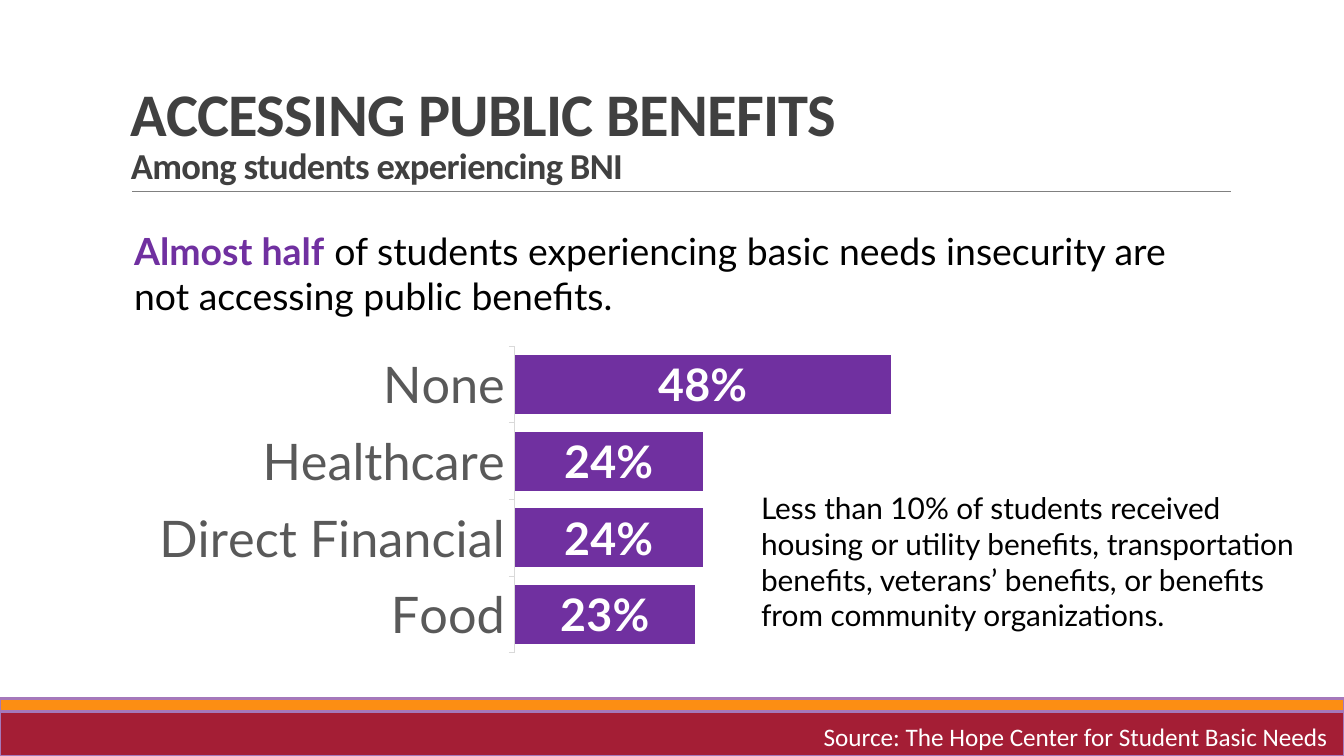
import dataclasses

import pptx
import pptx.chart.data
import pptx.dml.color
import pptx.enum.chart
import pptx.enum.shapes
import pptx.enum.text
import pptx.oxml.ns
import pptx.util
from lxml import etree

Inches = pptx.util.Inches
Pt = pptx.util.Pt


@dataclasses.dataclass(frozen=True)
class Theme:
    heading_font: str = "Calibri"
    body_font: str = "Lato"
    purple: str = "7030A0"
    crimson: str = "A41E35"
    orange: str = "FC8E13"
    band_edge: str = "A578BA"
    heading: str = "404040"
    rule: str = "808080"
    axis_text: str = "595959"
    axis_line: str = "D9D9D9"
    black: str = "000000"
    white: str = "FFFFFF"
    title_size: float = 43.2
    subtitle_size: float = 26.1
    lead_size: float = 26.7
    note_size: float = 21.3
    source_size: float = 18
    category_size: float = 36
    label_size: float = 32


THEME = Theme()


def rgb(color):
    return pptx.dml.color.RGBColor.from_string(color)


def style_font(font, name, size, color, bold=False):
    font.name = name
    font.size = Pt(size)
    font.color.rgb = rgb(color)
    font.bold = bold


def add_text_box(slide, left, top, width, height, wrap=True):
    box = slide.shapes.add_textbox(Inches(left), Inches(top), Inches(width), Inches(height))
    box.text_frame.word_wrap = wrap
    return box.text_frame


def add_span(para, text, name, size, color, bold=False):
    span = para.add_run()
    span.text = text
    style_font(span.font, name, size, color, bold)
    return span


def add_band(slide, left, top, width, height, color):
    band = slide.shapes.add_shape(
        pptx.enum.shapes.MSO_SHAPE.RECTANGLE,
        Inches(left), Inches(top), Inches(width), Inches(height))
    band.shadow.inherit = False
    band.fill.solid()
    band.fill.fore_color.rgb = rgb(color)
    band.line.color.rgb = rgb(THEME.band_edge)
    band.line.width = Pt(2)


def add_footer(slide, left, top, width, height):
    stripe = 0.13
    add_band(slide, left, top + stripe, width, height - stripe, THEME.crimson)
    add_band(slide, left, top, width, stripe, THEME.orange)
    source_width = 5.26
    frame = add_text_box(slide, left + width - source_width, top + 0.18,
                         source_width, 0.4, wrap=False)
    add_span(frame.paragraphs[0], "Source: The Hope Center for Student Basic Needs",
             THEME.heading_font, THEME.source_size, THEME.white)


def add_title(slide, left, top, width, height):
    bottom = top + height
    rule = slide.shapes.add_connector(
        pptx.enum.shapes.MSO_CONNECTOR.STRAIGHT,
        Inches(left + 0.11), Inches(bottom), Inches(left + width + 0.01), Inches(bottom))
    rule.line.color.rgb = rgb(THEME.rule)
    rule.line.width = Pt(0.5)
    etree.SubElement(rule._element.spPr, pptx.oxml.ns.qn("a:effectLst"))

    frame = add_text_box(slide, left, top, width, height)
    frame.vertical_anchor = pptx.enum.text.MSO_ANCHOR.BOTTOM
    para = frame.paragraphs[0]
    para.line_spacing = 0.85
    title = add_span(para, "ACCESSING PUBLIC BENEFITS", THEME.heading_font,
                     THEME.title_size, THEME.heading, True)
    para.add_line_break()
    subtitle = add_span(para, "Among students experiencing BNI", THEME.heading_font,
                        THEME.subtitle_size, THEME.heading, True)
    for span in (title, subtitle):
        span.font._element.set("spc", "-50")


def add_lead(slide, left, top, width, height):
    frame = add_text_box(slide, left, top, width, height)
    frame.margin_left = frame.margin_right = Inches(0.13)
    frame.margin_top = frame.margin_bottom = Inches(0.07)
    para = frame.paragraphs[0]
    add_span(para, "Almost half", THEME.body_font, THEME.lead_size, THEME.purple, True)
    add_span(para, " of students experiencing basic needs insecurity are not accessing"
             " public benefits.", THEME.body_font, THEME.lead_size, THEME.black)


def add_benefits_chart(slide, left, top, width, height):
    benefits = pptx.chart.data.CategoryChartData(number_format="0%")
    benefits.categories = ["Food", "Direct Financial", "Healthcare", "None"]
    benefits.add_series("Series 1", [0.23, 0.24, 0.24, 0.48])
    chart = slide.shapes.add_chart(
        pptx.enum.chart.XL_CHART_TYPE.BAR_CLUSTERED,
        Inches(left), Inches(top), Inches(width), Inches(height), benefits).chart
    chart.has_legend = False
    chart.has_title = False
    style_font(chart.font, THEME.body_font, THEME.category_size, THEME.black)

    categories = chart.category_axis
    categories.major_tick_mark = pptx.enum.chart.XL_TICK_MARK.OUTSIDE
    categories.format.line.color.rgb = rgb(THEME.axis_line)
    categories.format.line.width = Pt(0.75)
    style_font(categories.tick_labels.font, THEME.body_font,
               THEME.category_size, THEME.axis_text)

    values = chart.value_axis
    values.visible = False
    values.has_major_gridlines = False
    values.minimum_scale = 0
    values.maximum_scale = 0.6

    plot = chart.plots[0]
    plot.gap_width = 30
    plot.vary_by_categories = False
    bars = plot.series[0].format.fill
    bars.solid()
    bars.fore_color.rgb = rgb(THEME.purple)
    plot.has_data_labels = True
    labels = plot.data_labels
    labels.show_value = True
    labels.position = pptx.enum.chart.XL_LABEL_POSITION.CENTER
    labels.number_format = "0%"
    labels.number_format_is_linked = False
    style_font(labels.font, THEME.body_font, THEME.label_size, THEME.white, True)


def add_note(slide, left, top, width, height):
    frame = add_text_box(slide, left, top, width, height)
    add_span(frame.paragraphs[0],
             "Less than 10% of students received housing or utility benefits, transportation"
             " benefits, veterans’ benefits, or benefits from community organizations.",
             THEME.body_font, THEME.note_size, THEME.black)


def main():
    deck = pptx.Presentation()
    deck.slide_width = Inches(13.33)
    deck.slide_height = Inches(7.5)
    slide = deck.slides.add_slide(deck.slide_layouts[6])
    add_footer(slide, 0, 6.93, 13.33, 0.57)
    add_title(slide, 1.2, 0.31, 11, 1.59)
    add_lead(slide, 1.2, 2.19, 10.79, 1.03)
    add_benefits_chart(slide, 1.41, 3.37, 8.53, 3.17)
    add_note(slide, 7.45, 4.81, 5.65, 1.54)
    deck.save("out.pptx")


if __name__ == "__main__":
    main()
